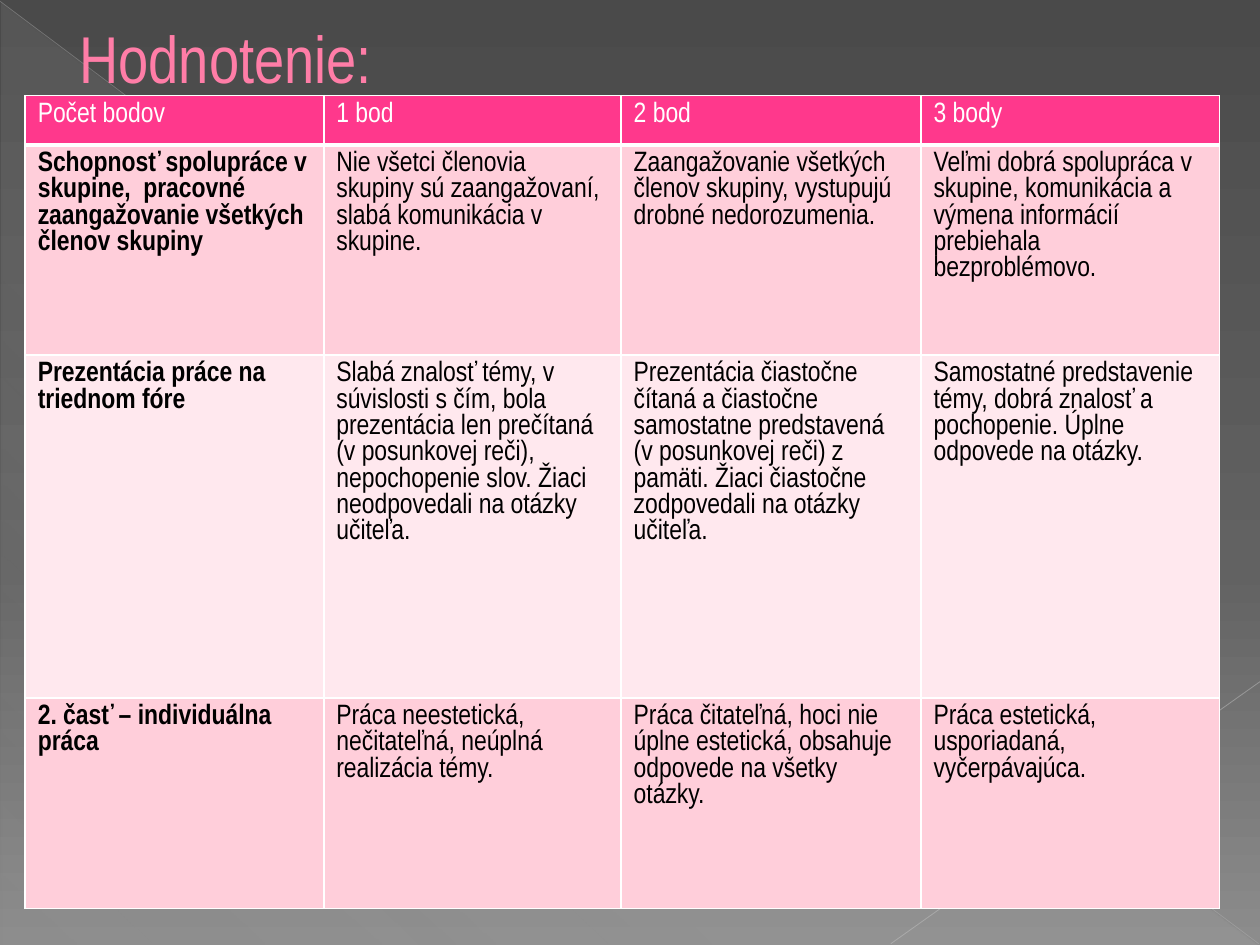
from lxml import etree
from pptx import Presentation
from pptx.dml.color import RGBColor
from pptx.enum import shapes, text
from pptx.oxml import parse_xml
from pptx.oxml.ns import nsdecls, qn
from pptx.util import Inches, Pt

THEME = {
    "font": "Arial Narrow",
    "title_size": 37.8,
    "body_size": 16,
    "title": "FF7DA7",
    "title_outline": "B12761",
    "header": "FF388C",
    "bands": ["FFCEDA", "FFE8EE"],
    "header_text": "FFFFFF",
    "body_text": "000000",
    "border": "FFFFFF",
    "background": [(0, "4A4A4A", 100), (60, "626262", 100), (100, "8C8C8C", 100)],
    "triangle": [(0, "D2D2D2", 10), (70, "D2D2D2", 8), (100, "D2D2D2", 1)],
}


def set_gradient(fill, parent, stops, angle):
    fill.solid()
    stop_xml = "".join(
        f'<a:gs pos="{pos * 1000}"><a:srgbClr val="{color}">'
        f'<a:alpha val="{alpha * 1000}"/></a:srgbClr></a:gs>'
        for pos, color, alpha in stops
    )
    gradient = parse_xml(
        f'<a:gradFill {nsdecls("a")} rotWithShape="1"><a:gsLst>{stop_xml}</a:gsLst>'
        f'<a:lin ang="{angle * 60000}" scaled="0"/></a:gradFill>'
    )
    solid = next(parent.iter(qn("a:solidFill")))
    solid.getparent().replace(solid, gradient)


def format_run(run, size, color, bold=False):
    run.font.name = THEME["font"]
    run.font.size = Pt(size)
    run.font.bold = bold
    run.font.color.rgb = RGBColor.from_string(color)


prs = Presentation()
prs.slide_width, prs.slide_height = Inches(10), Inches(7.5)
slide = prs.slides.add_slide(prs.slide_layouts[5])
set_gradient(slide.background.fill, slide.element, THEME["background"], 90)

triangle = slide.shapes.add_shape(
    shapes.MSO_SHAPE.RIGHT_TRIANGLE, Inches(0.01), Inches(0.02), Inches(9.98), Inches(7.48)
)
triangle.shadow.inherit = False
triangle.line.fill.background()
set_gradient(triangle.fill, triangle.element, THEME["triangle"], 133)

for start, end, color, width, alpha in [
    ((0, 0.01), (9.99, 7.49), "BFBFBF", 0.39, 35),
    ((10, 5.41), (7.07, 7.49), "C6C6C6", 0.47, 45),
]:
    diagonal = slide.shapes.add_connector(
        shapes.MSO_CONNECTOR.STRAIGHT, *map(Inches, start + end)
    )
    diagonal.line.width = Pt(width)
    diagonal.line.color.rgb = RGBColor.from_string(color)
    tint = next(diagonal.element.iter(qn("a:srgbClr")))
    etree.SubElement(tint, qn("a:alpha")).set("val", str(alpha * 1000))
    etree.SubElement(diagonal.element.spPr, qn("a:effectLst"))

title = slide.shapes.title
title.element.getparent().append(title.element)
title.left, title.top, title.width, title.height = map(Inches, (0, 0.3, 9, 0.3))
title.text_frame.text = "Hodnotenie:"
title.text_frame.auto_size = text.MSO_AUTO_SIZE.NONE
title.text_frame.vertical_anchor = text.MSO_ANCHOR.MIDDLE
heading = title.text_frame.paragraphs[0]
heading.alignment = text.PP_ALIGN.LEFT
heading_format = heading._p.get_or_add_pPr()
heading_format.set("marL", str(Inches(0.53)))
heading_format.set("indent", "0")
format_run(heading.runs[0], THEME["title_size"], THEME["title"])
heading.runs[0].font._element.insert(0, parse_xml(
    f'<a:ln {nsdecls("a")} w="{Pt(0.5)}"><a:solidFill>'
    f'<a:srgbClr val="{THEME["title_outline"]}"/></a:solidFill></a:ln>'
))

criteria = [
    ["Počet bodov", "1 bod", "2 bod", "3 body"],
    [
        "Schopnosť spolupráce v skupine,  pracovné zaangažovanie všetkých členov skupiny",
        "Nie všetci členovia skupiny sú zaangažovaní, slabá komunikácia v skupine.",
        "Zaangažovanie všetkých členov skupiny, vystupujú drobné nedorozumenia.",
        "Veľmi dobrá spolupráca v skupine, komunikácia a výmena informácií prebiehala "
        "bezproblémovo.",
    ],
    [
        "Prezentácia práce na triednom fóre",
        "Slabá znalosť témy, v súvislosti s čím, bola prezentácia len prečítaná "
        "(v posunkovej reči), nepochopenie slov. Žiaci neodpovedali na otázky učiteľa.",
        "Prezentácia čiastočne čítaná a čiastočne samostatne predstavená "
        "(v posunkovej reči) z pamäti. Žiaci čiastočne zodpovedali na otázky učiteľa.",
        "Samostatné predstavenie témy, dobrá znalosť a pochopenie. Úplne odpovede na otázky.",
    ],
    [
        "2. časť – individuálna práca",
        "Práca neestetická, nečitateľná, neúplná realizácia témy.",
        "Práca čitateľná, hoci nie úplne estetická, obsahuje odpovede na všetky otázky.",
        "Práca estetická, usporiadaná, vyčerpávajúca.",
    ],
]
rubric = slide.shapes.add_table(
    4, 4, Inches(0.2), Inches(0.76), Inches(9.47), Inches(6.46)
).table
rubric.first_row = rubric.horz_banding = False
for column, width in zip(rubric.columns, [2.37, 2.36, 2.38, 2.37]):
    column.width = Inches(width)
for row, height in zip(rubric.rows, [0.39, 1.67, 2.72, 1.67]):
    row.height = Inches(height)

for r, entries in enumerate(criteria):
    is_header = r == 0
    for c, entry in enumerate(entries):
        cell = rubric.cell(r, c)
        cell.text_frame.text = entry
        format_run(
            cell.text_frame.paragraphs[0].runs[0],
            THEME["body_size"],
            THEME["header_text"] if is_header else THEME["body_text"],
            bold=c == 0 and not is_header,
        )
        borders = cell._tc.get_or_add_tcPr()
        for side in "LRTB":
            thick = (r, side) in [(0, "B"), (1, "T")]
            borders.append(parse_xml(
                f'<a:ln{side} {nsdecls("a")} w="{Pt(3 if thick else 1)}"><a:solidFill>'
                f'<a:srgbClr val="{THEME["border"]}"/></a:solidFill></a:ln{side}>'
            ))
        cell.fill.solid()
        cell.fill.fore_color.rgb = RGBColor.from_string(
            THEME["header"] if is_header else THEME["bands"][(r - 1) % 2]
        )

prs.save("out.pptx")
